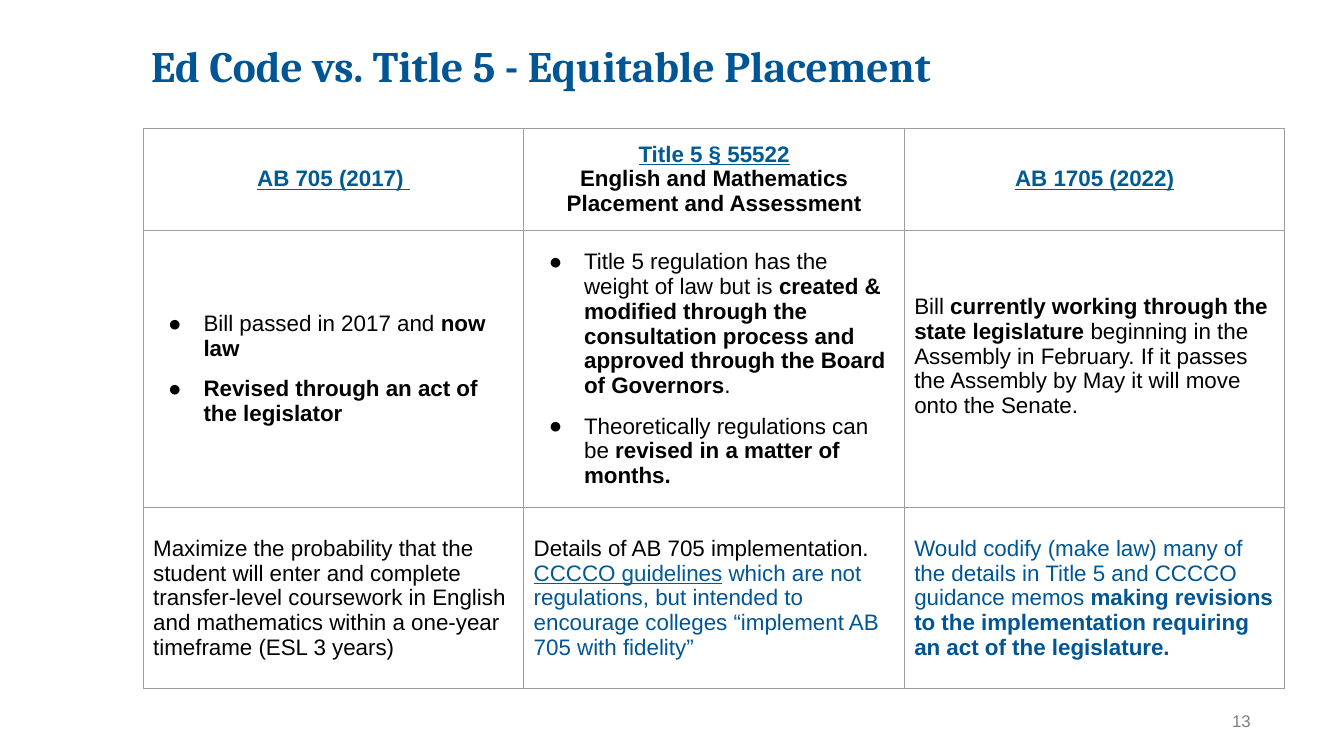
"""Build the slide comparing Ed Code and Title 5 on equitable placement."""
from lxml import etree
from pptx import Presentation
from pptx import util as u
from pptx.dml.color import RGBColor
from pptx.enum import text
from pptx.oxml.ns import qn

COLORS = {"title": "005595", "link": "005B95", "body": "000000",
          "number": "7F7F7F", "border": "9E9E9E"}
CENTER, LEFT, RIGHT = text.PP_ALIGN.CENTER, text.PP_ALIGN.LEFT, text.PP_ALIGN.RIGHT


def add_color(parent, color):
    fill = etree.SubElement(parent, qn("a:solidFill"))
    etree.SubElement(fill, qn("a:srgbClr"), val=COLORS[color])


def write_run(paragraph, words, size, color="body", bold=False, underline=False, name="Arial"):
    run = paragraph.add_run()
    run.text = words
    run.font.name = name
    run.font.size = u.Pt(size)
    run.font.bold = bold
    run.font.underline = underline
    run.font.color.rgb = RGBColor.from_string(COLORS[color])


presentation = Presentation()
presentation.slide_width = u.Cm(33.87)
presentation.slide_height = u.Cm(19.05)
slide = presentation.slides.add_slide(presentation.slide_layouts[6])

title = slide.shapes.add_textbox(u.Cm(3.56), u.Cm(1.02), u.Cm(27.91), u.Cm(3.68))
title.text_frame.word_wrap = True
title_paragraph = title.text_frame.paragraphs[0]
title_paragraph.line_spacing = 0.9
write_run(title_paragraph, "Ed Code vs. Title 5 - Equitable Placement", 31,
          "title", bold=True, name="Cambria")

page_number = slide.shapes.add_textbox(u.Cm(28.98), u.Cm(17.65), u.Cm(2.54), u.Cm(1.02))
page_number.text_frame.word_wrap = True
page_number.text_frame.margin_right = 0
page_number.text_frame.vertical_anchor = text.MSO_ANCHOR.MIDDLE
page_number.text_frame.paragraphs[0].alignment = RIGHT
write_run(page_number.text_frame.paragraphs[0], "13", 12, "number")

# Each cell is a list of paragraphs, each paragraph a list of (words, color, bold, underline).
rows = [
    [
        [[("AB 705 (2017) ", "link", True, True)]],
        [[("Title 5 § 55522", "link", True, True)],
         [("English and Mathematics Placement and Assessment", "body", True)]],
        [[("AB 1705 (2022)", "link", True, True)]],
    ],
    [
        [[("Bill passed in 2017 and ",), ("now law", "body", True)],
         [("Revised through an act of the legislator", "body", True)]],
        [[("Title 5 regulation has the weight of law but is ",),
          ("created & modified through the consultation process and approved "
           "through the Board of Governors", "body", True),
          (".",)],
         [("Theoretically regulations can be ",),
          ("revised in a matter of months.", "body", True)]],
        [[("Bill ",),
          ("currently working through the state legislature", "body", True),
          (" beginning in the Assembly in February. If it passes the Assembly "
           "by May it will move onto the Senate.",)]],
    ],
    [
        [[("Maximize the probability that the student will enter and complete "
           "transfer-level coursework in English and mathematics within a "
           "one-year timeframe (ESL 3 years)",)]],
        [[("Details of AB 705 implementation. ",),
          ("CCCCO guidelines", "link", False, True),
          (" which are not regulations, but intended to encourage colleges "
           "“implement AB 705 with fidelity”", "title")]],
        [[("Would codify (make law) many of the details in Title 5 and CCCCO "
           "guidance memos ", "title"),
          ("making revisions to the implementation requiring an act of the "
           "legislature.", "title", True)]],
    ],
]
row_heights = [2.57, 6.99, 4.57]
column_width = 9.59

table = slide.shapes.add_table(3, 3, u.Cm(3.61), u.Cm(3.23), u.Cm(3 * column_width),
                               u.Cm(sum(row_heights))).table
table.first_row = False
table.horz_banding = False
for column in table.columns:
    column.width = u.Cm(column_width)

for row_index, (height, row) in enumerate(zip(row_heights, rows)):
    table.rows[row_index].height = u.Cm(height)
    for column_index, paragraphs in enumerate(row):
        cell = table.cell(row_index, column_index)
        cell.vertical_anchor = text.MSO_ANCHOR.MIDDLE
        cell.margin_left = cell.margin_right = cell.margin_top = cell.margin_bottom = u.Cm(0.25)
        if (row_index, column_index) == (1, 2):
            cell.margin_bottom = u.Cm(0.88)
        properties = cell._tc.get_or_add_tcPr()
        for side in ("lnL", "lnR", "lnT", "lnB"):
            add_color(etree.SubElement(properties, qn(f"a:{side}"), w=str(u.Pt(0.75))), "border")
        cell.fill.background()

        bulleted = row_index == 1 and column_index < 2
        for paragraph_index, runs in enumerate(paragraphs):
            frame = cell.text_frame
            paragraph = frame.add_paragraph() if paragraph_index else frame.paragraphs[0]
            paragraph.alignment = LEFT if row_index else CENTER
            if bulleted:
                bullet = paragraph._p.get_or_add_pPr()
                bullet.set("marL", str(u.Cm(1.27)))
                bullet.set("indent", str(u.Cm(-0.89)))
                bullet_color = etree.SubElement(bullet, qn("a:buClr"))
                etree.SubElement(bullet_color, qn("a:srgbClr"), val=COLORS["body"])
                etree.SubElement(bullet, qn("a:buFont"), typeface="Arial")
                etree.SubElement(bullet, qn("a:buChar"), char="●")
                if paragraph_index:
                    paragraph.space_before = u.Pt(11)
            for words, *style in runs:
                write_run(paragraph, words, 16, *style)

presentation.save("out.pptx")
